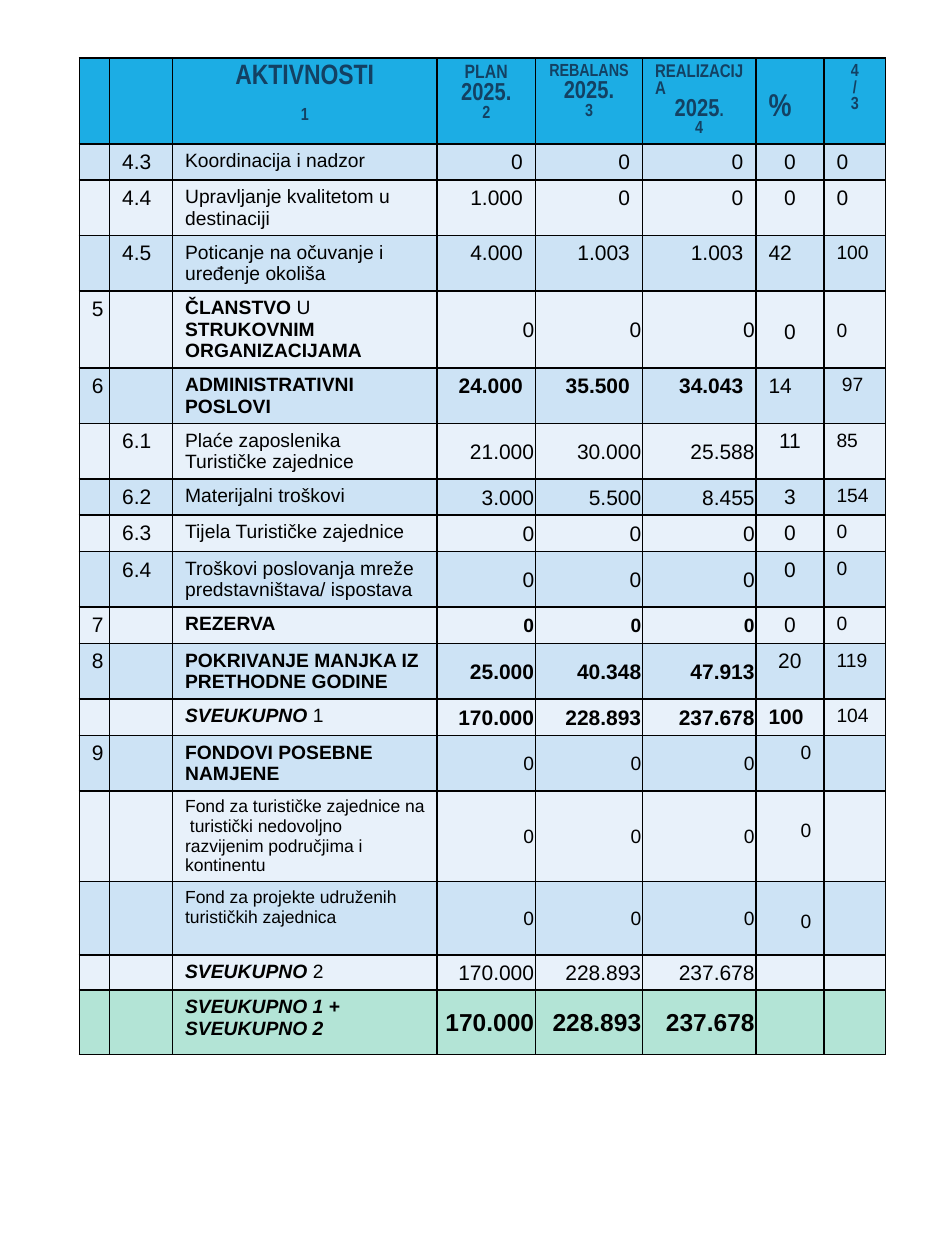
from dataclasses import dataclass

from lxml import etree
from pptx import Presentation
from pptx.dml.color import RGBColor
from pptx.enum.text import MSO_ANCHOR as ANCHOR, PP_ALIGN as ALIGN
from pptx.oxml.ns import qn
from pptx.util import Inches, Pt

BLACK, NAVY, BLUE, GREEN = "000000", "134163", "1CADE4", "B3E4D6"
BANDS = ("E8F1FA", "CDE3F5")
COLS = (0.23, 0.5, 2.1, 0.78, 0.85, 0.9, 0.54, 0.49)
HEADER_HEIGHT = 0.66
DROP = 0.23
L, C, R = ALIGN.LEFT, ALIGN.CENTER, ALIGN.RIGHT

HEADERS = {
    2: [([("AKTIVNOSTI", 16)], C, 0), ([("1", 10)], C, 10)],
    3: [([("PLAN", 11)], C, 0), ([("2025.", 14)], C, 0), ([("2", 10)], C, 0)],
    4: [([("REBALANS", 10)], C, 0), ([("2025.", 14)], C, 0), ([("3", 10)], C, 0)],
    5: [([("REALIZACIJA", 10.5)], L, 0), ([("2025", 14), (".", 10.5)], C, 0),
        ([("4", 10)], C, 0)],
    6: [([("%", 18)], L, 0)],
    7: [([(text, 10)], C, 0) for text in "4/3"],
}


@dataclass
class Row:
    height: float
    number: str
    code: str
    activity: list
    values: tuple
    pct: str = ""
    ratio: str = ""
    inset: bool = True
    size: float = 12
    bold: bool = False
    pct_align: ALIGN = C
    pct_size: float = 12
    pct_bold: bool = False
    ratio_size: float = 11
    activity_size: float = 11
    drop: bool = False


ZEROS = ("0",) * 3
TOTALS = ("170.000", "228.893", "237.678")
FUND = dict(size=11, pct_align=R, pct_size=11)

ROWS = [
    Row(0.28, "", "4.3", [("Koordinacija i nadzor", "")], ZEROS, "0", "0",
        inset=False, ratio_size=12),
    Row(0.44, "", "4.4", [("Upravljanje kvalitetom u destinaciji", "")],
        ("1.000", "0", "0"), "0", "0", inset=False, ratio_size=12),
    Row(0.44, "", "4.5", [("Poticanje na očuvanje i uređenje okoliša", "")],
        ("4.000", "1.003", "1.003"), "42", "100", inset=False, pct_align=L),
    Row(0.61, "5", "", [("ČLANSTVO", "b"), (" U ", ""), ("STRUKOVNIM ORGANIZACIJAMA", "b")],
        ZEROS, "0", "0", drop=True),
    Row(0.44, "6", "", [("ADMINISTRATIVNI POSLOVI", "b")],
        ("24.000", "35.500", "34.043"), "14", " 97", inset=False, bold=True, pct_align=L),
    Row(0.44, "", "6.1", [("Plaće zaposlenika Turističke zajednice", "")],
        ("21.000", "30.000", "25.588"), "11", "85"),
    Row(0.28, "", "6.2", [("Materijalni troškovi", "")],
        ("3.000", "5.500", "8.455"), "3", "154"),
    Row(0.29, "", "6.3", [("Tijela Turističke zajednice", "")], ZEROS, "0", "0"),
    Row(0.44, "", "6.4", [("Troškovi poslovanja mreže predstavništava/ ispostava", "")],
        ZEROS, "0", "0"),
    Row(0.28, "7", "", [("REZERVA", "b")], ZEROS, "0", "0", size=11, bold=True),
    Row(0.44, "8", "", [("POKRIVANJE MANJKA IZ PRETHODNE GODINE", "b")],
        ("25.000", "40.348", "47.913"), "20", "119", bold=True),
    Row(0.29, "", "", [("SVEUKUPNO", "bi"), (" 1", "")], TOTALS, "100", "104",
        bold=True, pct_align=L, pct_bold=True),
    Row(0.44, "9", "", [("FONDOVI POSEBNE NAMJENE", "b")], ZEROS, "0", **FUND),
    Row(0.72, "", "", [("Fond za turističke zajednice na  turistički nedovoljno "
                        "razvijenim područjima i kontinentu", "")],
        ZEROS, "0", activity_size=10, drop=True, **FUND),
    Row(0.58, "", "", [("Fond za projekte udruženih turističkih zajednica", "")],
        ZEROS, "0", activity_size=10, drop=True, **FUND),
    Row(0.28, "", "", [("SVEUKUPNO ", "bi"), ("2", "")], TOTALS),
    Row(0.51, "", "", [("SVEUKUPNO 1 + SVEUKUPNO 2", "bi")], TOTALS, size=14, bold=True),
]


def rgb(color):
    return RGBColor.from_string(color)


def style_cell(cell, fill):
    tcPr = cell._tc.get_or_add_tcPr()
    for side in ("lnL", "lnR", "lnT", "lnB"):
        ln = etree.SubElement(tcPr, qn("a:" + side), w=str(Pt(1)))
        solid = etree.SubElement(ln, qn("a:solidFill"))
        etree.SubElement(solid, qn("a:srgbClr"), val=BLACK)
    cell.fill.solid()
    cell.fill.fore_color.rgb = rgb(fill)
    set_font(cell.text_frame.paragraphs[0].font, 11)


def set_font(font, size, bold=False, name="Arial", color=BLACK):
    font.size = Pt(size)
    font.bold = bold
    font.name = name
    font.color.rgb = rgb(color)


def write(cell, text, size, align=L, bold=False):
    p = cell.text_frame.paragraphs[0]
    p.alignment = align
    if text:
        p.add_run().text = text
        set_font(p.font, size, bold)


def fill_header(cells):
    for cell in cells:
        style_cell(cell, BLUE)
    for col, lines in HEADERS.items():
        tf = cells[col].text_frame
        for i, (runs, align, gap) in enumerate(lines):
            p = tf.add_paragraph() if i else tf.paragraphs[0]
            p.alignment = align
            if gap:
                p.space_before = Pt(gap)
            set_font(p.font, runs[0][1], True, "Arial Narrow", NAVY)
            for text, size in runs:
                r = p.add_run()
                r.text = text
                if size != runs[0][1]:
                    r.font.size = Pt(size)
    cells[6].margin_top = Inches(0.28)


def fill_row(cells, row, fill):
    for cell in cells:
        style_cell(cell, fill)
    write(cells[0], row.number, 12)
    write(cells[1], row.code, 12)
    p = cells[2].text_frame.paragraphs[0]
    set_font(p.font, row.activity_size)
    for text, style in row.activity:
        r = p.add_run()
        r.text = text
        r.font.bold = "b" in style
        r.font.italic = "i" in style
    for cell, value in zip(cells[3:6], row.values):
        write(cell, value, row.size, R, row.bold)
        if row.inset:
            cell.vertical_anchor = ANCHOR.MIDDLE
            cell.margin_left = cell.margin_right = cell.margin_top = Inches(0.01)
            cell.margin_bottom = 0
    write(cells[6], row.pct, row.pct_size, row.pct_align, row.pct_bold)
    write(cells[7], row.ratio, row.ratio_size)
    if row.drop:
        for cell in cells[6:]:
            cell.margin_top = Inches(DROP)


def add_activity_table(slide, left, top, width, height):
    s = slide.shapes.add_table(len(ROWS) + 1, len(COLS), left, top, width, height)
    table = s.table
    for column, size in zip(table.columns, COLS):
        column.width = Inches(size)
    heights = [HEADER_HEIGHT] + [row.height for row in ROWS]
    for table_row, size in zip(table.rows, heights):
        table_row.height = Inches(size)
    fill_header(list(table.rows[0].cells))
    for i, row in enumerate(ROWS, 1):
        fill = GREEN if i == len(ROWS) else BANDS[i % 2]
        fill_row(list(table.rows[i].cells), row, fill)


def main():
    prs = Presentation()
    prs.slide_width, prs.slide_height = Inches(7.5), Inches(10)
    slide = prs.slides.add_slide(prs.slide_layouts[6])
    add_activity_table(slide, Inches(0.63), Inches(0.46), Inches(6.39), Inches(8.3))
    prs.save("out.pptx")


if __name__ == "__main__":
    main()
